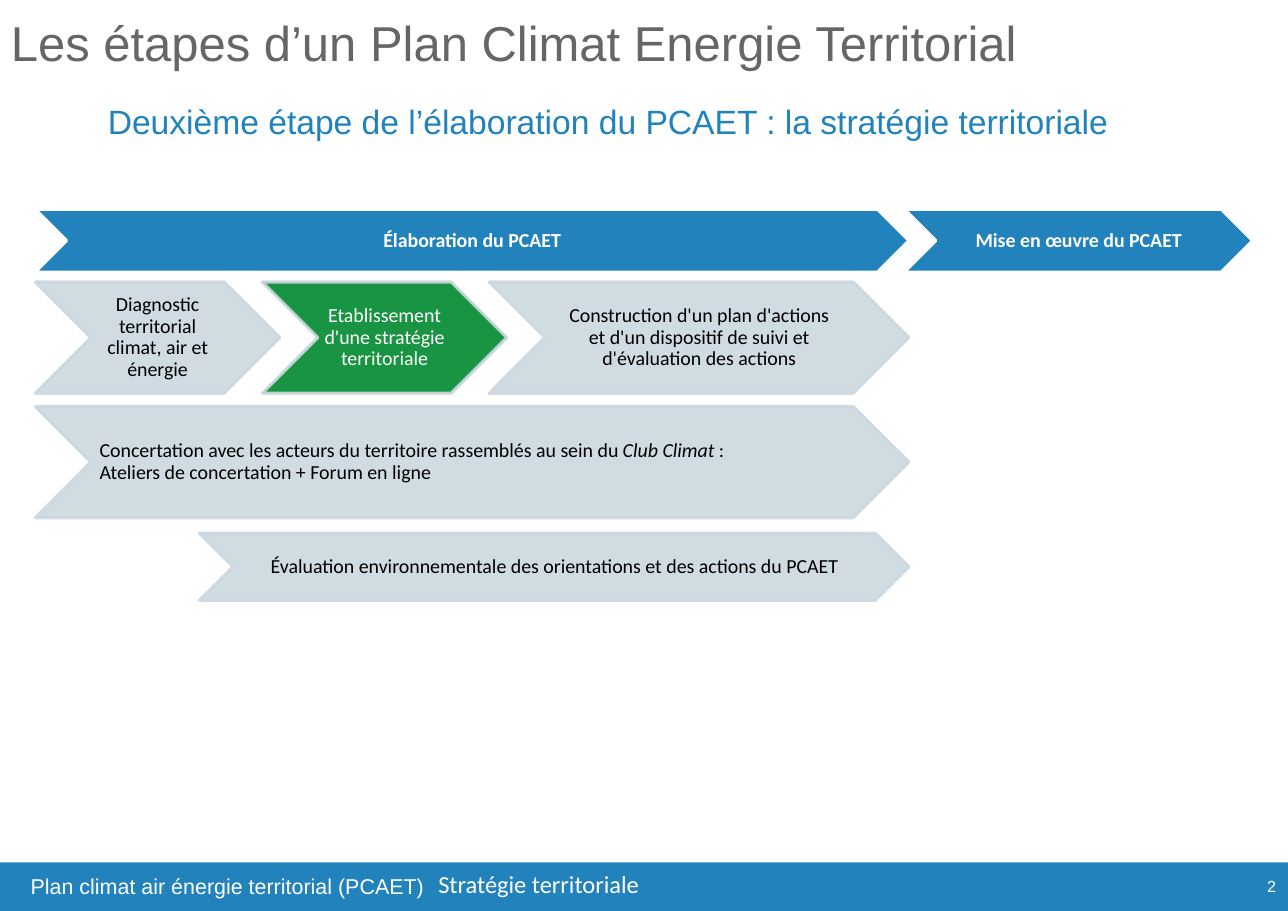
"""Build the slide on the territorial strategy step of a climate plan."""
from dataclasses import dataclass

import pptx
import pptx.dml.color
import pptx.enum.shapes
import pptx.enum.text
import pptx.oxml.ns
import pptx.util
from lxml import etree

Inches = pptx.util.Inches
Pt = pptx.util.Pt
Align = pptx.enum.text.PP_ALIGN
Anchor = pptx.enum.text.MSO_ANCHOR
Shape = pptx.enum.shapes.MSO_SHAPE
qn = pptx.oxml.ns.qn


@dataclass(frozen=True)
class Theme:
    """Colours, fonts and type sizes."""
    blue: str = "2282BC"
    green: str = "00892F"
    pale: str = "D0DCE2"
    soft: str = "CCD8DF"
    gray: str = "666666"
    white: str = "FFFFFF"
    black: str = "000000"
    head: str = "Arial"
    body: str = "Calibri"
    title: float = 32
    sub: float = 22
    tag: float = 16
    foot: float = 14
    step: float = 13
    page: float = 10.5


theme = Theme()


def write(shape, lines, size, face, color, align=Align.LEFT, anchor=Anchor.MIDDLE,
          bold=False, pad=(0.1, 0.05), space=0.9):
    """Fill a shape with lines, each a list of (text, italic) runs."""
    frame = shape.text_frame
    frame.word_wrap = True
    frame.vertical_anchor = anchor
    frame.margin_left = frame.margin_right = Inches(pad[0])
    frame.margin_top = frame.margin_bottom = Inches(pad[1])
    for i, line in enumerate(lines):
        para = frame.add_paragraph() if i else frame.paragraphs[0]
        para.alignment = align
        para.line_spacing = space
        for text, slant in line:
            run = para.add_run()
            run.text = text
            run.font.name = face
            run.font.size = Pt(size)
            run.font.bold = bold
            run.font.italic = slant
            run.font.color.rgb = pptx.dml.color.RGBColor.from_string(color)


def draw(kind, box, fill, edge=None):
    """Add a filled shape, with the soft and green tones let through by a tenth."""
    shape = slide.shapes.add_shape(kind, *map(Inches, box))
    shape.shadow.inherit = False
    shape.fill.solid()
    shape.fill.fore_color.rgb = pptx.dml.color.RGBColor.from_string(fill)
    if edge:
        shape.line.color.rgb = pptx.dml.color.RGBColor.from_string(edge)
        shape.line.width = Pt(2)
    else:
        shape.line.fill.background()
    for tone in shape._element.spPr.iter(qn("a:srgbClr")):
        if tone.get("val") in (theme.soft, theme.green):
            etree.SubElement(tone, qn("a:alpha")).set("val", "90000")
    return shape


deck = pptx.Presentation()
deck.slide_width = Inches(11.69)
deck.slide_height = Inches(8.27)
slide = deck.slides.add_slide(deck.slide_layouts[6])

draw(Shape.RECTANGLE, (-0.02, 7.83, 11.71, 0.44), theme.blue)

labels = [
    ((0.18, 7.88, 3.8, 0.34), "Plan climat air énergie territorial (PCAET)",
     theme.foot, theme.white, Align.LEFT, Anchor.TOP, 1),
    ((11.07, 7.83, 0.61, 0.42), "2",
     theme.page, theme.white, Align.RIGHT, Anchor.MIDDLE, 1),
    ((0.88, 0.85, 10.82, 0.55),
     "Deuxième étape de l’élaboration du PCAET : la stratégie territoriale",
     theme.sub, theme.blue, Align.LEFT, Anchor.MIDDLE, 0.9),
    ((0, 0, 10.58, 0.82), "Les étapes d’un Plan Climat Energie Territorial",
     theme.title, theme.gray, Align.LEFT, Anchor.MIDDLE, 0.9),
]
for box, text, size, color, align, anchor, space in labels:
    label = slide.shapes.add_textbox(*map(Inches, box))
    write(label, [[(text, False)]], size, theme.head, color, align, anchor, space=space)

phases = [
    (0.32, 7.93, 0.5, "Élaboration du PCAET"),
    (8.21, 3.16, 0, "Mise en œuvre du PCAET"),
]
for left, width, pad, text in phases:
    phase = draw(Shape.CHEVRON, (left, 1.9, width, 0.57), theme.blue, theme.white)
    write(phase, [[(text, False)]], theme.step, theme.body, theme.white,
          Align.CENTER, bold=True, pad=(pad, 0.01))

steps = [
    ((0.32, 2.56, 2.22, 1.01), theme.pale, theme.black, Align.CENTER, 0.04,
     [[("Diagnostic territorial climat, air et énergie", False)]]),
    ((2.38, 2.56, 2.22, 1.01), theme.green, theme.white, Align.CENTER, 0.04,
     [[("Etablissement d'une stratégie territoriale", False)]]),
    ((4.44, 2.56, 3.81, 1.01), theme.soft, theme.black, Align.CENTER, 0.16,
     [[("Construction d'un plan d'actions et d'un dispositif de suivi "
        "et d'évaluation des actions", False)]]),
    ((0.32, 3.69, 7.93, 1.01), theme.soft, theme.black, Align.LEFT, 0.08,
     [[("Concertation avec les acteurs du territoire rassemblés au sein du ", False),
       ("Club Climat ", True), (":", False)],
      [("Ateliers de concertation + Forum en ligne", False)]]),
    ((1.81, 4.84, 6.44, 0.61), theme.soft, theme.black, Align.CENTER, 0.12,
     [[("Évaluation environnementale des orientations et des actions du PCAET", False)]]),
]
for box, fill, color, align, pad, lines in steps:
    step = draw(Shape.CHEVRON, box, fill, theme.soft)
    write(step, lines, theme.step, theme.body, color, align, pad=(pad, 0.01))

tag = draw(Shape.RECTANGLE, (3.88, 7.84, 2.46, 0.37), theme.blue)
write(tag, [[("Stratégie territoriale", False)]], theme.tag, theme.body, theme.white,
      anchor=Anchor.TOP, space=1)

deck.save("out.pptx")
